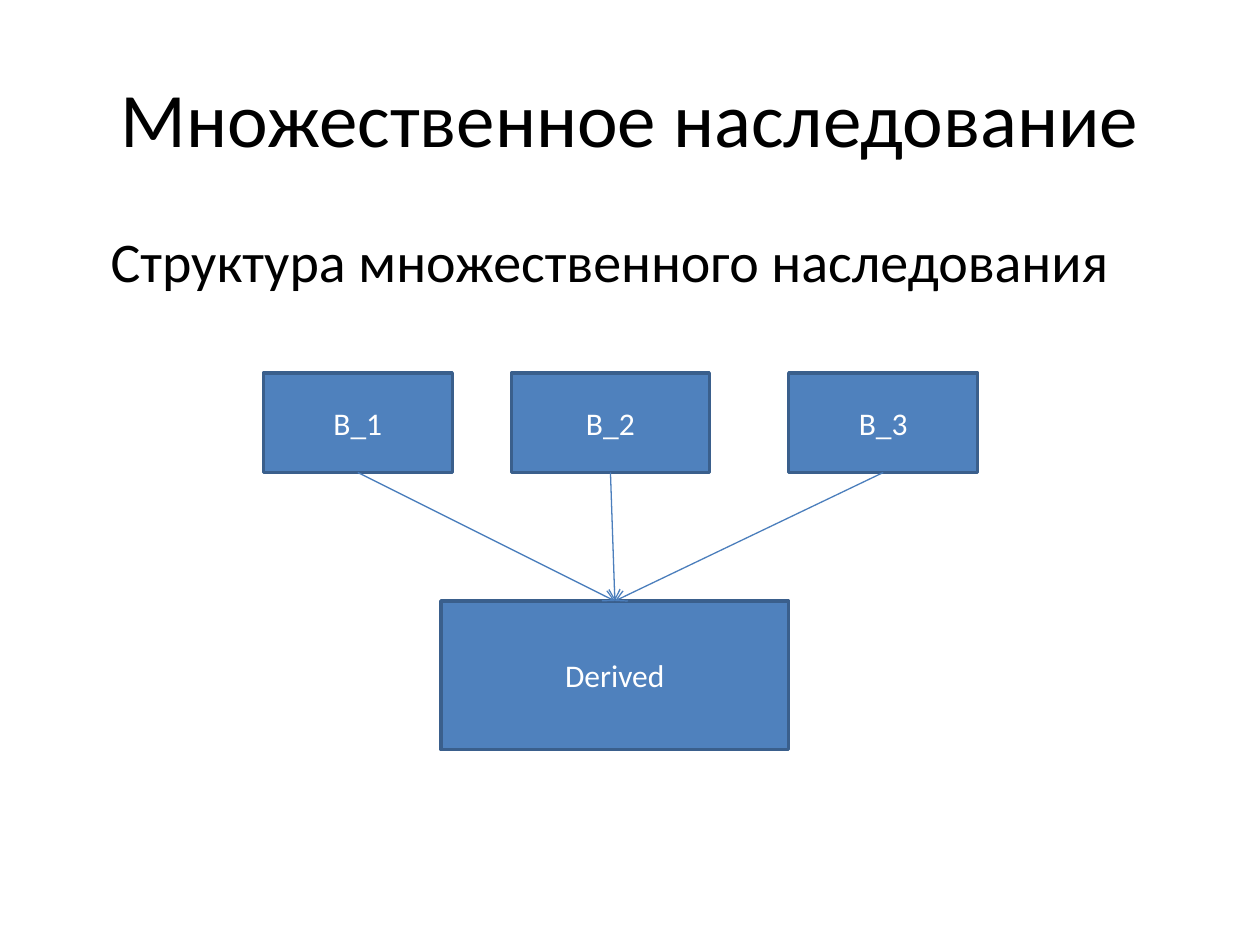
"""Build a slide showing three base classes feeding one derived class."""
import dataclasses

import lxml.etree
import pptx
import pptx.dml.color
import pptx.enum.shapes
import pptx.enum.text
import pptx.oxml.ns
import pptx.util

Inches = pptx.util.Inches
Pt = pptx.util.Pt
Align = pptx.enum.text.PP_ALIGN
Anchor = pptx.enum.text.MSO_ANCHOR
qn = pptx.oxml.ns.qn
rgb = pptx.dml.color.RGBColor.from_string


@dataclasses.dataclass(frozen=True)
class Theme:
    font: str = "Calibri"
    ink: str = "000000"
    label: str = "FFFFFF"
    fill: str = "4F81BD"
    border: str = "3A5F8C"
    arrow: str = "4B7EBC"
    title_size: int = 44
    body_size: int = 32
    label_size: int = 18


theme = Theme()


def write(box, text, size, color, align, anchor):
    frame = box.text_frame
    frame.word_wrap = True
    frame.vertical_anchor = anchor
    para = frame.paragraphs[0]
    para.alignment = align
    span = para.add_run()
    span.text = text
    span.font.name = theme.font
    span.font.size = Pt(size)
    span.font.color.rgb = rgb(color)
    return para


def add_class(page, name, left, top, width, height):
    box = page.shapes.add_shape(
        pptx.enum.shapes.MSO_SHAPE.RECTANGLE,
        Inches(left), Inches(top), Inches(width), Inches(height))
    box.shadow.inherit = False
    box.fill.solid()
    box.fill.fore_color.rgb = rgb(theme.fill)
    box.line.color.rgb = rgb(theme.border)
    box.line.width = Pt(2)
    write(box, name, theme.label_size, theme.label, Align.CENTER, Anchor.MIDDLE)
    return box


deck = pptx.Presentation()
deck.slide_width = Inches(10)
deck.slide_height = Inches(7.5)
page = deck.slides.add_slide(deck.slide_layouts[6])

title = page.shapes.add_textbox(Inches(0.5), Inches(0.3), Inches(9), Inches(1.25))
write(title, "Множественное наследование", theme.title_size, theme.ink,
      Align.CENTER, Anchor.MIDDLE)

body = page.shapes.add_textbox(Inches(0.5), Inches(1.75), Inches(9), Inches(4.95))
para = write(body, "Структура множественного наследования", theme.body_size,
             theme.ink, Align.JUSTIFY, Anchor.TOP)
para.space_before = Pt(6.4)
para._p.get_or_add_pPr().set("indent", str(Inches(0.28)))

bases = [
    add_class(page, name, left, 2.96, width, 0.79)
    for name, left, width in (("В_1", 2.09, 1.5), ("В_2", 4.06, 1.57), ("В_3", 6.26, 1.5))
]
derived = add_class(page, "Derived", 3.5, 4.77, 2.76, 1.18)

for base in bases:
    arrow = page.shapes.add_connector(
        pptx.enum.shapes.MSO_CONNECTOR.STRAIGHT, 0, 0, 0, 0)
    arrow.begin_connect(base, 2)
    arrow.end_connect(derived, 0)
    arrow.line.color.rgb = rgb(theme.arrow)
    arrow.line.width = Pt(0.75)
    lxml.etree.SubElement(arrow.line._get_or_add_ln(), qn("a:tailEnd"), type="arrow")
    lxml.etree.SubElement(arrow._element.spPr, qn("a:effectLst"))

deck.save("out.pptx")
